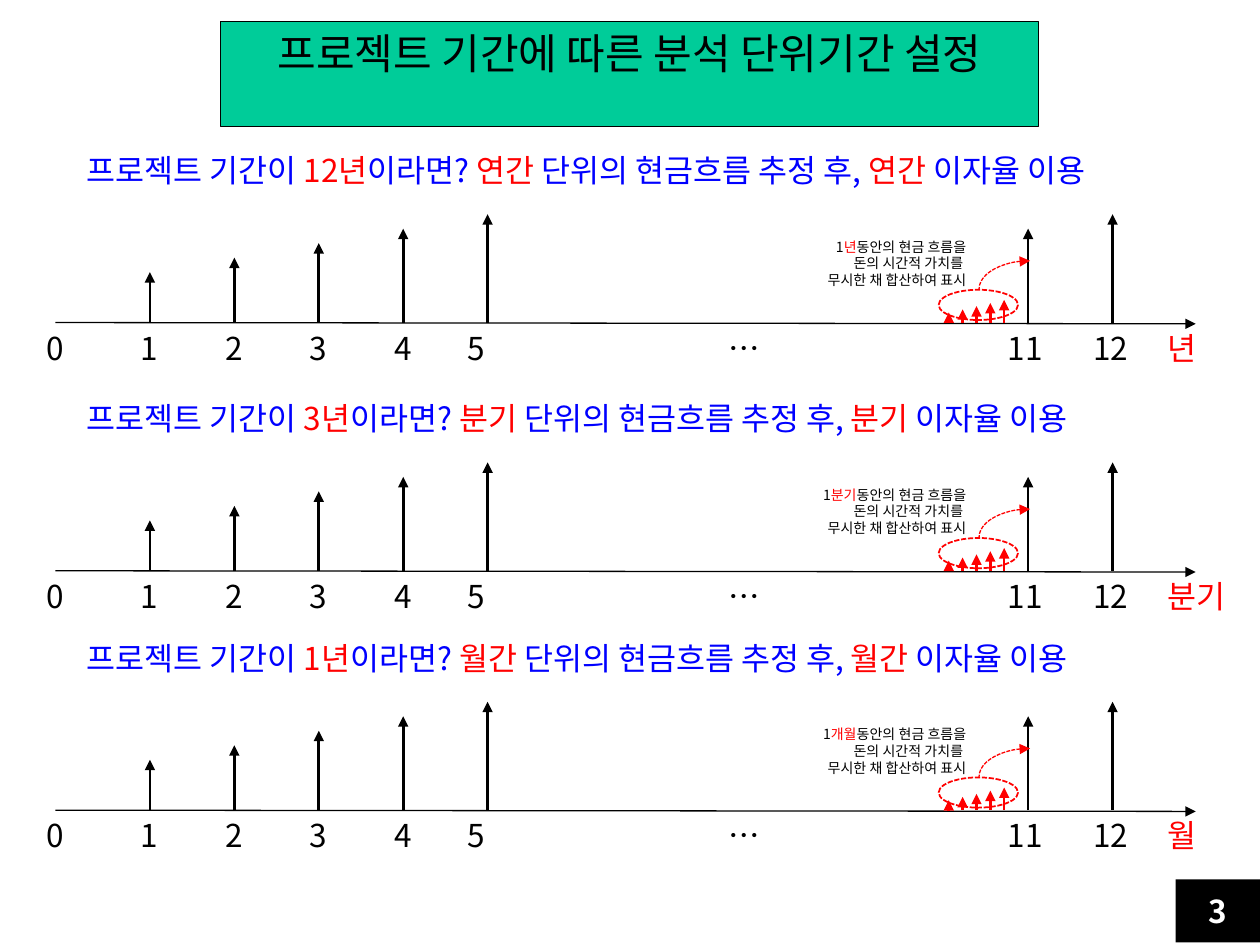
import pptx
import pptx.dml.color
import pptx.enum.dml
import pptx.enum.shapes
import pptx.enum.text
import pptx.oxml
import pptx.oxml.ns
import pptx.util
from dataclasses import dataclass

Inches = pptx.util.Inches
Shape = pptx.enum.shapes.MSO_SHAPE
Align = pptx.enum.text.PP_ALIGN
Anchor = pptx.enum.text.MSO_ANCHOR
AutoSize = pptx.enum.text.MSO_AUTO_SIZE


@dataclass(frozen=True)
class Theme:
    font: str = "Noto Sans CJK KR"
    black: str = "000000"
    white: str = "FFFFFF"
    blue: str = "0000FF"
    red: str = "FF0000"
    green: str = "00CC99"
    title_size: int = 24
    body_size: int = 18
    note_size: int = 8


def rgb(color):
    return pptx.dml.color.RGBColor.from_string(color)


def add_xml(parent, tag, **attributes):
    child = pptx.oxml.parse_xml(f"<a:{tag} {pptx.oxml.ns.nsdecls('a')}/>")
    for name, value in attributes.items():
        child.set(name, value)
    parent.append(child)


class SlideBuilder:
    def __init__(self, slide, theme):
        self.slide = slide
        self.theme = theme

    def fill_text(self, shape, paragraphs, size, align=Align.LEFT, bold=False, wrap=True,
                  anchor=Anchor.TOP, auto_size=AutoSize.SHAPE_TO_FIT_TEXT):
        """Fill a shape with paragraphs, each a list of (text, colour) runs."""
        frame = shape.text_frame
        frame.word_wrap = wrap
        frame.auto_size = auto_size
        frame.vertical_anchor = anchor
        for index, runs in enumerate(paragraphs):
            para = frame.add_paragraph() if index else frame.paragraphs[0]
            para.alignment = align
            for text, color in runs:
                span = para.add_run()
                span.text = text
                span.font.size = pptx.util.Pt(size)
                span.font.bold = bold
                span.font.name = self.theme.font
                span.font.color.rgb = rgb(color)
                add_xml(span.font._element, "ea", typeface=self.theme.font)

    def title(self, text, left, top, width, height):
        box = self.slide.shapes.title
        box.left, box.top, box.width, box.height = map(Inches, (left, top, width, height))
        box.fill.solid()
        box.fill.fore_color.rgb = rgb(self.theme.green)
        self.outline(box.line, self.theme.black, 0.75)
        self.fill_text(box, [[(text, self.theme.black)]], self.theme.title_size,
                       Align.CENTER, wrap=False)

    def text(self, paragraphs, left, top, width, height, size=None, **options):
        box = self.slide.shapes.add_textbox(*map(Inches, (left, top, width, height)))
        self.fill_text(box, paragraphs, size or self.theme.body_size, **options)

    def outline(self, line, color, weight, dashed=False):
        line.color.rgb = rgb(color)
        line.width = pptx.util.Pt(weight)
        if dashed:
            line.dash_style = pptx.enum.dml.MSO_LINE.SQUARE_DOT

    def shape(self, kind, left, top, width, height, fill=None):
        shape = self.slide.shapes.add_shape(kind, *map(Inches, (left, top, width, height)))
        shape.shadow.inherit = False
        if fill:
            shape.fill.solid()
            shape.fill.fore_color.rgb = rgb(fill)
        else:
            shape.fill.background()
        shape.line.fill.background()
        return shape

    def arrow(self, start, end, color, weight, group=None):
        shapes = (group or self.slide).shapes
        line = shapes.add_connector(pptx.enum.shapes.MSO_CONNECTOR.STRAIGHT,
                                    *map(Inches, (*start, *end)))
        self.outline(line.line, color, weight)
        add_xml(line.line._get_or_add_ln(), "tailEnd", type="triangle")
        add_xml(line._element.spPr, "effectLst")

    def curved_arrow(self, left, top, width, height):
        arc = self.shape(Shape.ARC, left, top, width, height)
        self.outline(arc.line, self.theme.red, 0.75, dashed=True)
        arc._element.spPr.xfrm.set("flipH", "1")
        add_xml(arc.line._get_or_add_ln(), "headEnd", type="triangle")

    def heading(self, base, duration, unit):
        blue, red = self.theme.blue, self.theme.red
        runs = [("프로젝트 기간이 ", blue), (duration, red), ("이라면? ", blue),
                (unit + " ", red), ("단위의 현금흐름 추정 후, ", blue),
                (unit, red), (" 이자율 이용", blue)]
        self.text([runs], 0.59, base - 1.41, 9.41, 0.4)

    def axis(self, base, unit):
        black = self.theme.black
        self.arrow((0.44, base), (9.49, base + 0.01), black, 0.75)
        labels = [("0", 0.27, 0.33)]
        labels += [(str(n), 1.02 + 0.67 * (n - 1), 0.34) for n in range(1, 5)]
        labels += [("5", 3.61, 0.5), ("…", 5.68, 0.5), ("11", 7.9, 0.53), ("12", 8.58, 0.5)]
        for label, left, width in labels:
            self.text([[(label, black)]], left, base, width, 0.4)
        self.text([[(unit, self.theme.red)]], 9.17, base, 0.83, 0.4)

        flows = [(1.19 + 0.67 * step, step) for step in range(5)] + [(8.16, 3), (8.83, 4)]
        for x, step in flows:
            self.arrow((x, base), (x, base - 0.4 - 0.115 * step), black, 1.5)

    def summed_flows(self, base, unit):
        """Small flows inside one period, with the note and arrow to their sum."""
        black, red = self.theme.black, self.theme.red
        oval = self.shape(Shape.OVAL, 7.45, base - 0.26, 0.63, 0.24, self.theme.white)
        self.outline(oval.line, red, 1, dashed=True)
        note = [[("1", black), (unit, red), ("동안의 현금 흐름을", black)],
                [("돈의 시간적 가치를 ", black)],
                [("무시한 채 합산하여 표시", black)]]
        self.text(note, 6.3, base - 0.72, 1.47, 0.5, self.theme.note_size,
                  align=Align.RIGHT, wrap=False)
        self.curved_arrow(7.77, base - 0.49, 0.81, 0.45)
        group = self.slide.shapes.add_group_shape()
        for step in range(5):
            x = 7.53 + 0.11 * step
            self.arrow((x, base), (x, base - 0.08 - 0.025 * step), red, 1.5, group)

    def page_number(self, number):
        box = self.shape(Shape.RECTANGLE, 9.33, 6.98, 0.67, 0.5, self.theme.black)
        self.fill_text(box, [[(number, self.theme.white)]], self.theme.body_size,
                       Align.CENTER, bold=True, anchor=Anchor.MIDDLE,
                       auto_size=AutoSize.NONE)


def main():
    deck = pptx.Presentation()
    deck.slide_width, deck.slide_height = Inches(10), Inches(7.5)
    page = SlideBuilder(deck.slides.add_slide(deck.slide_layouts[5]), Theme())
    page.title("프로젝트 기간에 따른 분석 단위기간 설정", 1.75, 0.17, 6.49, 0.51)
    timelines = [(2.56, "12년", "연간", "년", "년"),
                 (4.53, "3년", "분기", "분기", "분기"),
                 (6.43, "1년", "월간", "월", "개월")]
    for base, duration, rate_unit, axis_unit, note_unit in timelines:
        page.heading(base, duration, rate_unit)
        page.axis(base, axis_unit)
        page.summed_flows(base, note_unit)
    page.page_number("3")
    deck.save("out.pptx")


if __name__ == "__main__":
    main()
